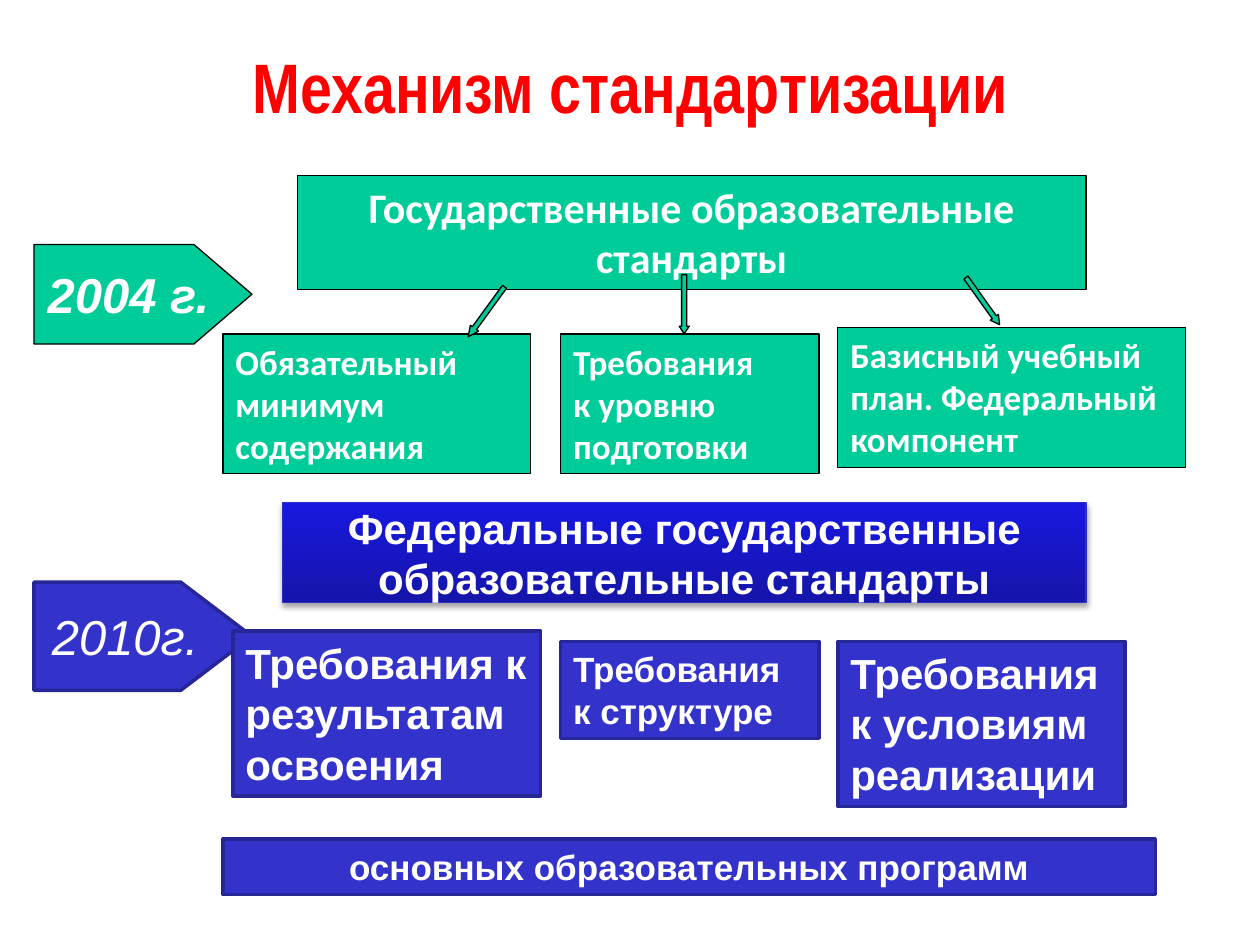
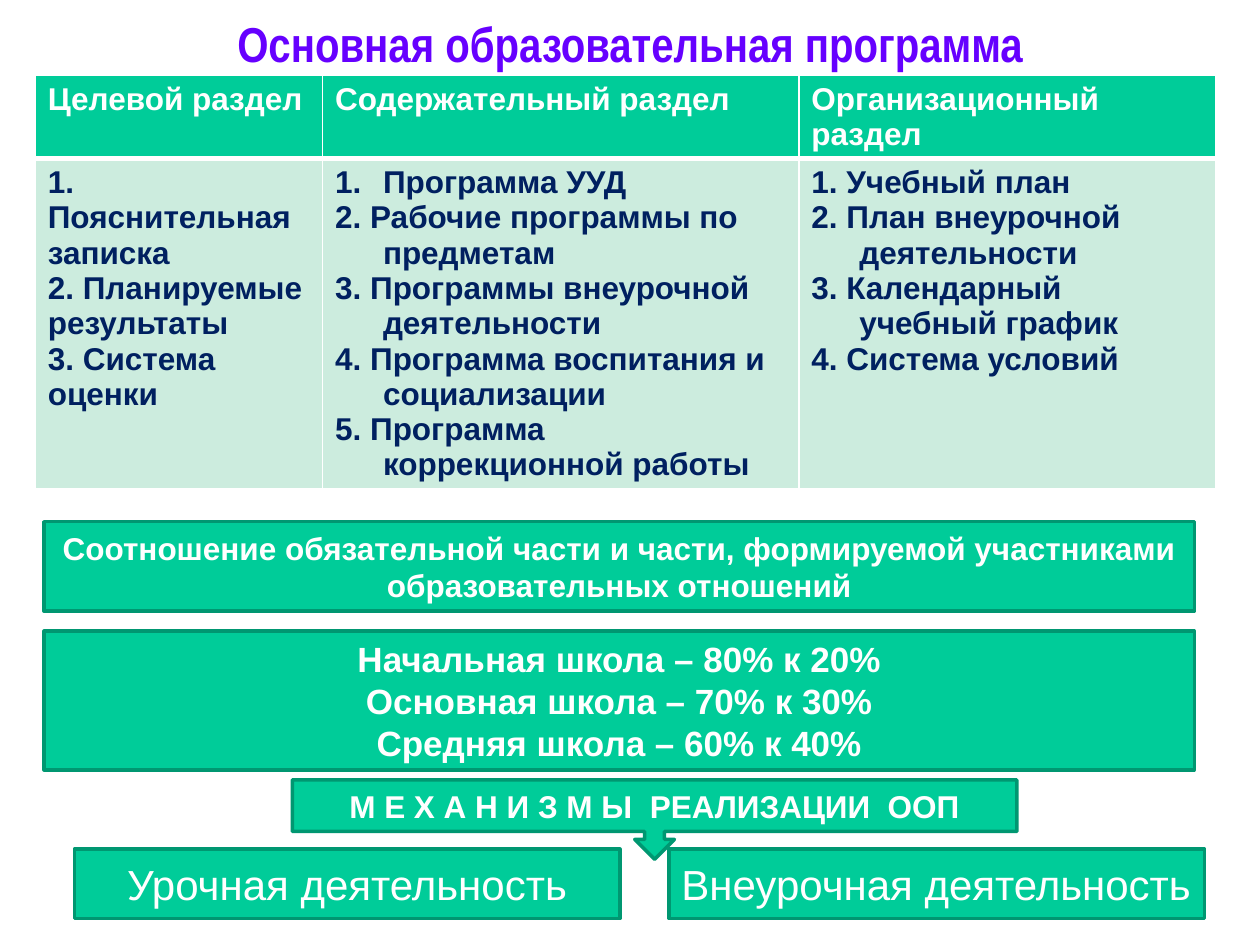
"""Builds two slides on educational standards and the basic educational programme."""
import collections

import lxml.etree
import pptx
import pptx.dml.color
import pptx.enum.shapes
import pptx.enum.text
import pptx.oxml.ns
import pptx.util

RGBColor = pptx.dml.color.RGBColor
Inches = pptx.util.Inches
Pt = pptx.util.Pt
SHAPE = pptx.enum.shapes.MSO_SHAPE
ANCHOR = pptx.enum.text.MSO_ANCHOR
ALIGN = pptx.enum.text.PP_ALIGN
qn = pptx.oxml.ns.qn

WHITE = RGBColor(0xFF, 0xFF, 0xFF)
BLACK = RGBColor(0x00, 0x00, 0x00)
RED = RGBColor(0xFF, 0x00, 0x00)
VIOLET = RGBColor(0x66, 0x00, 0xFF)
NAVY = RGBColor(0x00, 0x20, 0x60)
GREEN = RGBColor(0x00, 0xCC, 0x99)
DARK_GREEN = RGBColor(0x00, 0x97, 0x71)
PALE_GREEN = RGBColor(0xCC, 0xEC, 0xDE)
BLUE = RGBColor(0x33, 0x33, 0xCC)
DARK_BLUE = RGBColor(0x26, 0x26, 0x97)
BANNER_EDGE = RGBColor(0x2E, 0x2E, 0xCB)
BANNER_BOTTOM = RGBColor(0x15, 0x15, 0xA9)
BANNER_TOP = RGBColor(0x18, 0x18, 0xE1)

Look = collections.namedtuple("Look", "fill edge width")
OLD_STANDARD = Look(GREEN, BLACK, 0.75)
NEW_STANDARD = Look(BLUE, DARK_BLUE, 2)
BANNER = Look(BLUE, BANNER_EDGE, 0.75)
PROGRAMME = Look(GREEN, DARK_GREEN, 2)
HANGING = Inches(0.38)


class Deck:
    def __init__(self):
        self.presentation = pptx.Presentation()
        self.presentation.slide_width = Inches(10)
        self.presentation.slide_height = Inches(7.5)
        self.slide = None

    def add_text(self, paragraph, text, size, color=WHITE, font="Arial", bold=True, italic=False):
        for index, line in enumerate(text.split("\n")):
            if index:
                paragraph.add_line_break()
            run = paragraph.add_run()
            run.text = line
            run.font.name = font
            run.font.size = Pt(size)
            run.font.bold = bold
            run.font.italic = italic
            run.font.color.rgb = color

    def paragraphs(self, frame, texts):
        for index, text in enumerate(texts):
            yield (frame.add_paragraph() if index else frame.paragraphs[0]), text

    def start_slide(self, heading, place, size, color):
        self.slide = self.presentation.slides.add_slide(self.presentation.slide_layouts[5])
        title = self.slide.shapes.title
        title.left, title.top, title.width, title.height = map(Inches, place)
        frame = title.text_frame
        frame.auto_size = pptx.enum.text.MSO_AUTO_SIZE.NONE
        frame.vertical_anchor = ANCHOR.MIDDLE
        frame.paragraphs[0].alignment = ALIGN.CENTER
        self.add_text(frame.paragraphs[0], heading, size, color, "Arial Narrow")

    def shape(self, kind, place, look, adjustments=(), rotation=0):
        shape = self.slide.shapes.add_shape(kind, *map(Inches, place))
        shape.shadow.inherit = False
        shape.fill.solid()
        shape.fill.fore_color.rgb = look.fill
        shape.line.color.rgb = look.edge
        shape.line.width = Pt(look.width)
        for index, value in enumerate(adjustments):
            shape.adjustments[index] = value
        shape.rotation = rotation
        return shape

    def box(self, texts, place, look, size, kind=SHAPE.RECTANGLE, adjustments=(),
            align=ALIGN.CENTER, anchor=ANCHOR.MIDDLE, wrap=True, **style):
        shape = self.shape(kind, place, look, adjustments)
        frame = shape.text_frame
        frame.word_wrap = wrap
        frame.vertical_anchor = anchor
        for paragraph, text in self.paragraphs(frame, texts):
            paragraph.alignment = align
            self.add_text(paragraph, text, size, **style)
        return shape

    def banner(self, text, place, size):
        banner = self.box([text], place, BANNER, size)
        banner.fill.gradient()
        banner.fill.gradient_angle = 90
        for stop, color in zip(banner.fill.gradient_stops, (BANNER_BOTTOM, BANNER_TOP)):
            stop.color.rgb = color
        effects = banner._element.spPr.find(qn("a:effectLst"))
        shadow = lxml.etree.SubElement(
            effects, qn("a:outerShdw"), blurRad=str(Pt(3.1)), dist=str(Pt(1.8)),
            dir="5400000", rotWithShape="0")
        tone = lxml.etree.SubElement(shadow, qn("a:srgbClr"), val=str(BLACK))
        lxml.etree.SubElement(tone, qn("a:alpha"), val="35000")

    def borders(self, cell, bottom):
        properties = cell._tc.get_or_add_tcPr()
        for index, side in enumerate("LRTB"):
            width = Pt(bottom if side == "B" else 1)
            edge = lxml.etree.Element(qn(f"a:ln{side}"), w=str(width))
            fill = lxml.etree.SubElement(edge, qn("a:solidFill"))
            lxml.etree.SubElement(fill, qn("a:srgbClr"), val=str(WHITE))
            properties.insert(index, edge)

    def cell(self, cell, texts, fill, color, bottom, hanging=False, numbered=False):
        cell.fill.solid()
        cell.fill.fore_color.rgb = fill
        self.borders(cell, bottom)
        for paragraph, text in self.paragraphs(cell.text_frame, texts):
            properties = paragraph._p.get_or_add_pPr()
            if hanging:
                properties.set("marL", str(HANGING))
                properties.set("indent", str(-HANGING))
            if numbered and text == texts[0]:
                lxml.etree.SubElement(properties, qn("a:buAutoNum"), type="arabicPeriod")
            self.add_text(paragraph, text, 18, color)

    def sections(self, headings, contents, place, widths, heights):
        table = self.slide.shapes.add_table(2, len(headings), *map(Inches, place)).table
        for row, height in zip(table.rows, heights):
            row.height = Inches(height)
        for index, (heading, items) in enumerate(zip(headings, contents)):
            table.columns[index].width = Inches(widths[index])
            self.cell(table.cell(0, index), [heading], GREEN, WHITE, 3)
            self.cell(table.cell(1, index), items, PALE_GREEN, NAVY, 1,
                      hanging=index > 0, numbered=index == 1)


def standardisation(deck):
    deck.start_slide("Механизм стандартизации", (0.5, 0.28, 9, 0.79), 40, RED)
    deck.box(["2004 г."], (0.27, 1.94, 1.73, 0.79), OLD_STANDARD, 28,
             SHAPE.PENTAGON, [0.583], wrap=False, italic=True)
    deck.box(["Государственные образовательные стандарты"], (2.36, 1.39, 6.26, 0.91),
             OLD_STANDARD, 24, anchor=ANCHOR.TOP, font="Calibri")
    for text, left, top, width in (
            ("Обязательный минимум содержания", 1.77, 2.65, 2.44),
            ("Требования \nк уровню подготовки", 4.45, 2.65, 2.05),
            ("Базисный учебный план. Федеральный компонент", 6.65, 2.6, 2.76)):
        deck.box([text], (left, top, width, 1.11), OLD_STANDARD, 20,
                 align=ALIGN.LEFT, anchor=ANCHOR.TOP, font="Calibri")

    deck.banner("Федеральные государственные образовательные стандарты",
                (2.24, 3.99, 6.38, 0.79), 24)
    deck.box(["2010г."], (0.27, 4.62, 1.73, 0.86), NEW_STANDARD, 28,
             SHAPE.PENTAGON, [0.658], wrap=False, bold=False, italic=True)
    for text, place, size in (
            ("Требования к результатам освоения", (1.85, 5.01, 2.44, 1.31), 24),
            ("Требования \nк структуре", (4.45, 5.09, 2.05, 0.77), 20),
            ("Требования к условиям реализации", (6.65, 5.09, 2.28, 1.31), 24)):
        deck.box([text], place, NEW_STANDARD, size, align=ALIGN.LEFT, anchor=ANCHOR.TOP)
    deck.box(["основных образовательных программ"], (1.77, 6.66, 7.4, 0.44),
             NEW_STANDARD, 20, anchor=ANCHOR.TOP)

    for left, top, height, head, rotation in (
            (3.82, 2.23, 0.49, 1.05, 36),
            (5.39, 2.18, 0.47, 0.76, 0),
            (7.76, 2.16, 0.46, 0.9, 324.4)):
        deck.shape(SHAPE.DOWN_ARROW, (left, top, 0.08, height), OLD_STANDARD,
                   [0.5, head], rotation)


def programme(deck):
    deck.start_slide("Основная образовательная программа", (0, 0, 10, 0.68), 28, VIOLET)
    deck.sections(
        ["Целевой раздел", "Содержательный раздел", "Организационный раздел"],
        [["1. Пояснительная записка", "2. Планируемые результаты", "3. Система оценки"],
         ["Программа УУД", "2. Рабочие программы по предметам",
          "3. Программы внеурочной деятельности",
          "4. Программа воспитания и социализации",
          "5. Программа коррекционной работы"],
         ["1. Учебный план", "2. План внеурочной деятельности",
          "3. Календарный учебный график", "4. Система условий"]],
        (0.28, 0.6, 9.37, 3.27), (2.28, 3.78, 3.31), (0.65, 2.62))
    deck.box(["Соотношение обязательной части и части, формируемой участниками "
              "образовательных отношений"], (0.35, 4.14, 9.13, 0.71), PROGRAMME, 18)
    deck.box(["Начальная школа – 80% к 20%", "Основная школа – 70% к 30%",
              "Средняя школа – 60% к 40%"], (0.35, 5.01, 9.13, 1.1), PROGRAMME, 20)
    deck.box(["М Е Х А Н И З М Ы  РЕАЛИЗАЦИИ  ООП"], (2.32, 6.19, 5.75, 0.63),
             PROGRAMME, 18, SHAPE.DOWN_ARROW_CALLOUT)
    for activity, left, width, align in (
            ("Урочная деятельность", 0.59, 4.33, ALIGN.CENTER),
            ("Внеурочная деятельность", 5.31, 4.25, ALIGN.LEFT)):
        deck.box([activity], (left, 6.74, width, 0.55), PROGRAMME, 24,
                 align=align, bold=False)


def main():
    deck = Deck()
    standardisation(deck)
    programme(deck)
    deck.presentation.save("out.pptx")


if __name__ == "__main__":
    main()
